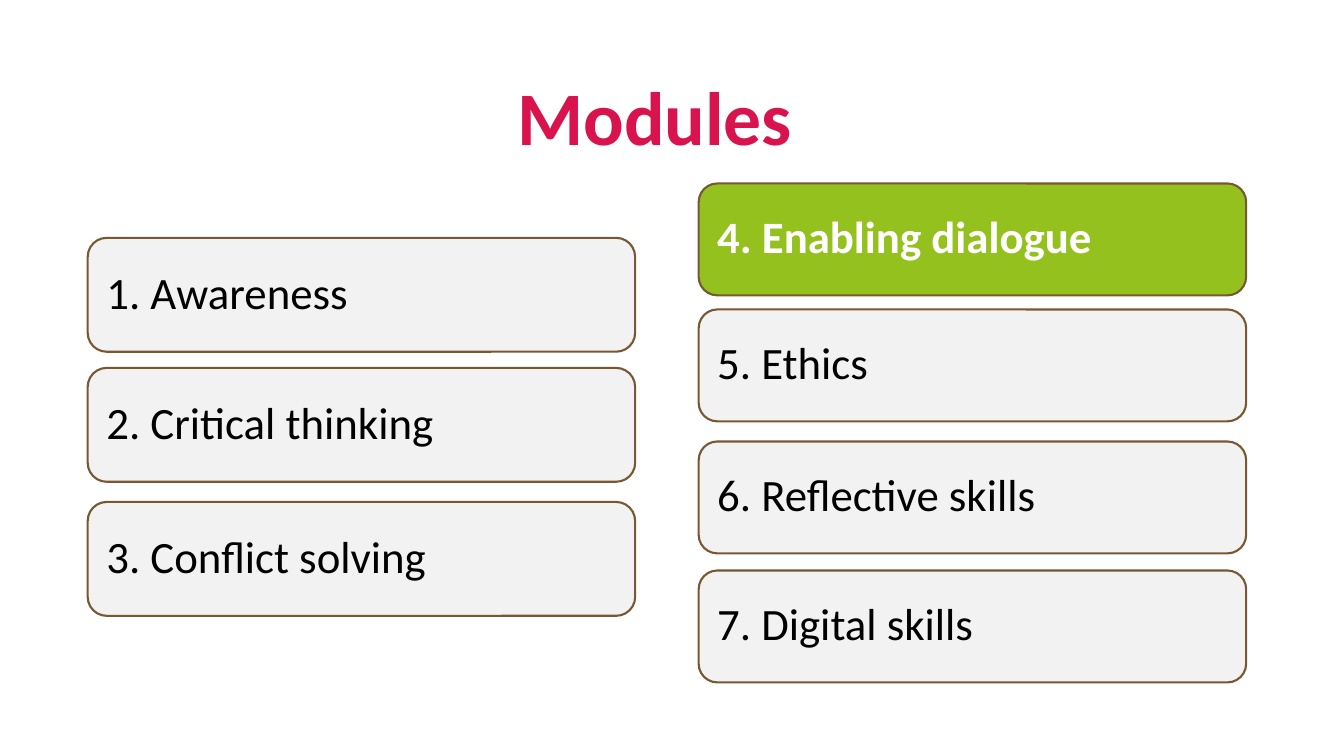
import pptx
import pptx.util
from pptx.dml.color import RGBColor
from pptx.enum.shapes import MSO_SHAPE
from pptx.enum.text import MSO_ANCHOR, PP_ALIGN

Inches = pptx.util.Inches
Pt = pptx.util.Pt

TITLE = "Modules"
ACTIVE = "4. Enabling dialogue"
CARD_WIDTH = 5.43
COLUMNS = [
    {"left": 0.87, "height": 1.13, "cards": [
        (2.36, "1. Awareness"),
        (3.65, "2. Critical thinking"),
        (4.98, "3. Conflict solving")]},
    {"left": 6.93, "height": 1.11, "cards": [
        (1.82, ACTIVE),
        (3.07, "5. Ethics"),
        (4.38, "6. Reflective skills"),
        (5.66, "7. Digital skills")]},
]
TITLE_FONT = {"name": "Calibri", "size": Pt(54), "bold": True}
CARD_FONT = {"name": "Calibri", "size": Pt(32), "bold": False}
CARD_FRAME = {"word_wrap": True, "vertical_anchor": MSO_ANCHOR.MIDDLE,
              "margin_left": Inches(0.13), "margin_right": Inches(0.13),
              "margin_top": Inches(0.13), "margin_bottom": Inches(0.13)}
TITLE_FRAME = {"word_wrap": True, "vertical_anchor": MSO_ANCHOR.BOTTOM}


def rgb(code):
    return RGBColor.from_string(code)


def set_all(target, values):
    for name, value in values.items():
        setattr(target, name, value)


def write(sp, text, frame, font, color, align):
    tf = sp.text_frame
    set_all(tf, frame)
    p = tf.paragraphs[0]
    set_all(p, {"alignment": align, "line_spacing": 0.9})
    r = p.add_run()
    r.text = text
    set_all(r.font, font)
    r.font.color.rgb = rgb(color)


def add_card(shapes, left, top, height, text):
    active = text == ACTIVE
    sp = shapes.add_shape(MSO_SHAPE.ROUNDED_RECTANGLE, Inches(left), Inches(top),
                          Inches(CARD_WIDTH), Inches(height))
    sp.shadow.inherit = False
    sp.fill.solid()
    sp.fill.fore_color.rgb = rgb("95C11F" if active else "F2F2F2")
    sp.line.color.rgb = rgb("785832")
    sp.line.width = Pt(1.5)
    write(sp, text, CARD_FRAME, {**CARD_FONT, "bold": active},
          "FFFFFF" if active else "000000", PP_ALIGN.LEFT)


def main():
    prs = pptx.Presentation()
    prs.slide_width, prs.slide_height = Inches(13.33), Inches(7.5)
    s = prs.slides.add_slide(prs.slide_layouts[6])
    title = s.shapes.add_textbox(Inches(0.01), Inches(-0.3), Inches(12.97), Inches(1.95))
    write(title, TITLE, TITLE_FRAME, TITLE_FONT, "D8134D", PP_ALIGN.CENTER)
    for column in COLUMNS:
        group = s.shapes.add_group_shape()
        for top, text in column["cards"]:
            add_card(group.shapes, column["left"], top, column["height"], text)
    prs.save("out.pptx")


if __name__ == "__main__":
    main()
